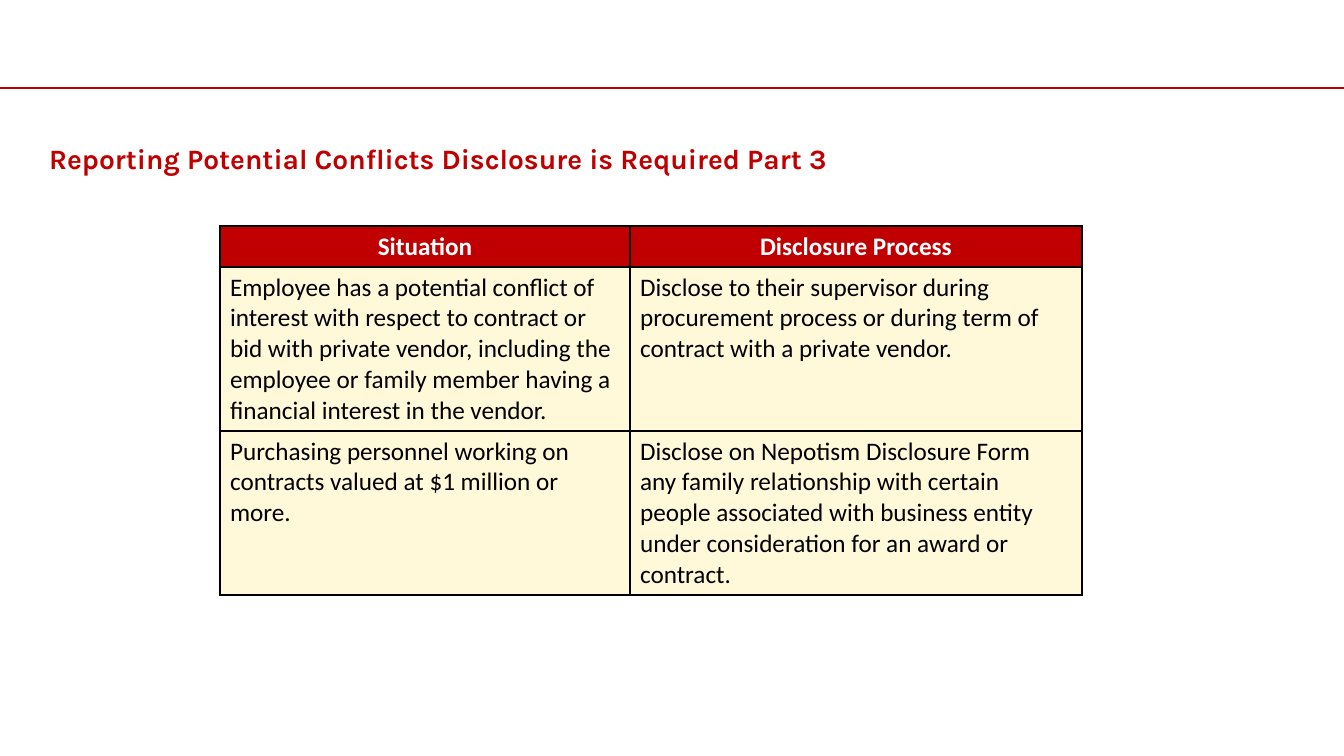
from lxml import etree
from pptx import Presentation
from pptx.dml.color import RGBColor
from pptx.enum.shapes import MSO_CONNECTOR
from pptx.enum.text import MSO_ANCHOR, PP_ALIGN
from pptx.oxml.ns import qn
from pptx.util import Pt

EMU_PER_PX = 914400 / 100.8
SLIDE_W, SLIDE_H = 1344, 756
STRAIGHT = MSO_CONNECTOR.STRAIGHT
TOP, MIDDLE = MSO_ANCHOR.TOP, MSO_ANCHOR.MIDDLE
LEFT, CENTER = PP_ALIGN.LEFT, PP_ALIGN.CENTER
COLORS = {"red": "C00000", "cream": "FFF9D9", "black": "000000", "white": "FFFFFF"}

TITLE = "Reporting Potential Conflicts Disclosure is Required Part 3"
COL_WIDTHS = [410, 452]
ROW_HEIGHTS = [41, 164, 164]
ROWS = [
    ["Situation", "Disclosure Process"],
    ["Employee has a potential conflict of interest with respect to contract or bid "
     "with private vendor, including the employee or family member having a financial "
     "interest in the vendor.",
     "Disclose to their supervisor during procurement process or during term of "
     "contract with a private vendor."],
    ["Purchasing personnel working on contracts valued at $1 million or more.",
     "Disclose on Nepotism Disclosure Form any family relationship with certain people "
     "associated with business entity under consideration for an award or contract."],
]


def px(n):
    return round(n * EMU_PER_PX)


def rgb(name):
    return RGBColor.from_string(COLORS[name])


def set_font(p, name, size, color, bold):
    p.font.name, p.font.size, p.font.bold = name, Pt(size), bold
    p.font.color.rgb = rgb(color)


def add_rule(s, x, y, w):
    line = s.shapes.add_connector(STRAIGHT, px(x), px(y), px(x + w), px(y))
    line.line.color.rgb = rgb("red")
    line.line.width = Pt(1.5)
    etree.SubElement(line._element.spPr, qn("a:effectLst"))


def add_title(s, x, y, w, h):
    sp = s.shapes.title
    sp.left, sp.top, sp.width, sp.height = px(x), px(y), px(w), px(h)
    tf = sp.text_frame
    tf.text = TITLE
    tf.word_wrap = True
    tf.vertical_anchor = MIDDLE
    p = tf.paragraphs[0]
    p.alignment = LEFT
    set_font(p, "Karla", 20, "red", True)


def border_cell(cell):
    """Draw a 1 pt black line on all four sides, ahead of the cell's fill."""
    tcPr = cell._tc.get_or_add_tcPr()
    for i, side in enumerate(("lnL", "lnR", "lnT", "lnB")):
        ln = etree.Element(qn(f"a:{side}"), w=str(Pt(1)))
        fill = etree.SubElement(ln, qn("a:solidFill"))
        etree.SubElement(fill, qn("a:srgbClr"), val=COLORS["black"])
        tcPr.insert(i, ln)


def add_disclosure_table(s, x, y, w, h):
    table = s.shapes.add_table(len(ROWS), len(COL_WIDTHS),
                               px(x), px(y), px(w), px(h)).table
    for column, width in zip(table.columns, COL_WIDTHS):
        column.width = px(width)
    for r, (texts, height) in enumerate(zip(ROWS, ROW_HEIGHTS)):
        table.rows[r].height = px(height)
        header = r == 0
        for c, text in enumerate(texts):
            cell = table.cell(r, c)
            cell.text = text
            cell.vertical_anchor = TOP
            cell.fill.solid()
            cell.fill.fore_color.rgb = rgb("red" if header else "cream")
            border_cell(cell)
            p = cell.text_frame.paragraphs[0]
            p.alignment = CENTER if header else LEFT
            set_font(p, "Calibri", 18, "white" if header else "black", header)


def main():
    prs = Presentation()
    prs.slide_width, prs.slide_height = px(SLIDE_W), px(SLIDE_H)
    s = prs.slides.add_slide(prs.slide_layouts.get_by_name("Title Only"))
    add_rule(s, 0, 88, SLIDE_W)
    add_title(s, 39, 130, 1266, 57)
    add_disclosure_table(s, 220, 226, sum(COL_WIDTHS), sum(ROW_HEIGHTS))
    prs.save("out.pptx")


if __name__ == "__main__":
    main()
